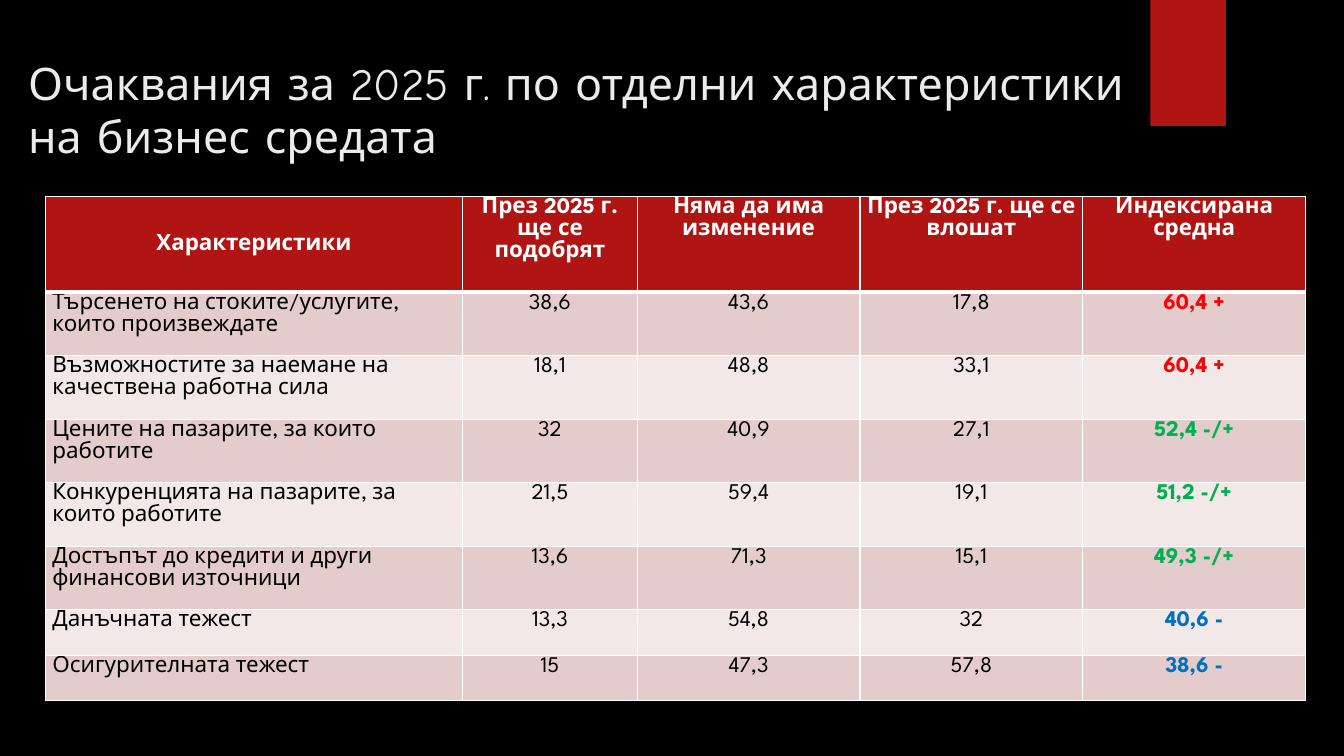
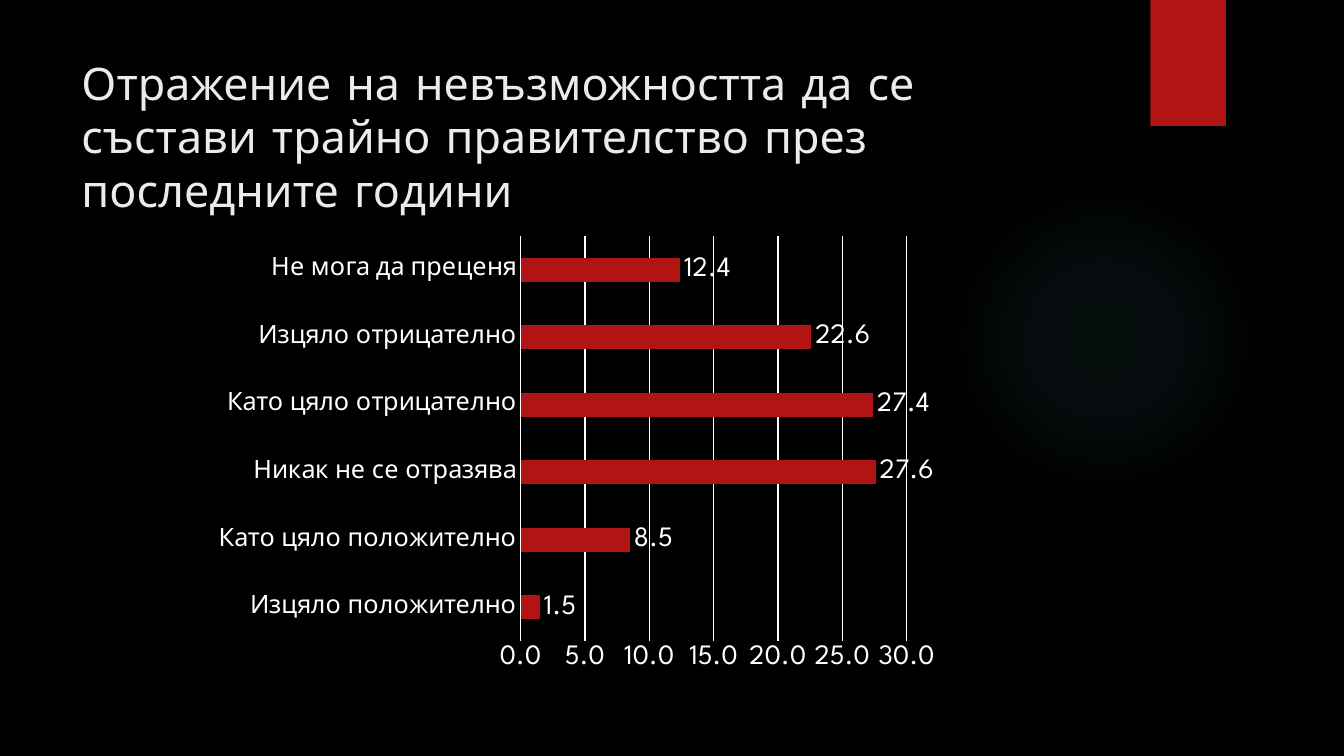
from pptx import Presentation
from pptx.chart.data import CategoryChartData
from pptx.dml.color import RGBColor
from pptx.enum.chart import XL_CHART_TYPE, XL_LABEL_POSITION, XL_TICK_MARK
from pptx.enum.shapes import MSO_SHAPE
from pptx.enum.text import MSO_ANCHOR, PP_ALIGN
from pptx.oxml import parse_xml
from pptx.oxml.ns import nsdecls, qn
from pptx.util import Inches, Pt

COLORS = {
    "background": "000000",
    "accent": "B01513",
    "glow": "50B9C1",
    "title": "EBEBEB",
    "white": "FFFFFF",
    "black": "000000",
    "band_dark": "E4CCCC",
    "band_light": "F2E8E7",
    "better": "FF0000",
    "mixed": "00B050",
    "worse": "0070C0",
}
TITLE_FONT = "Comic Neue"
BODY_FONT = "League Spartan"
GLOW_STOPS = [(0, 7), (36, 6), (69, 0)]  # position and opacity, percent
NUMBER_FORMAT = "###0.0"

HEADERS = ["Характеристики", "През 2025 г. ще се подобрят", "Няма да има изменение",
           "През 2025 г. ще се влошат", "Индексирана средна"]
EXPECTATIONS = [
    ("Търсенето на стоките/услугите, които произвеждате", "38,6", "43,6", "17,8", "60,4 +"),
    ("Възможностите за наемане на качествена работна сила", "18,1", "48,8", "33,1", "60,4 +"),
    ("Цените на пазарите, за които работите", "32", "40,9", "27,1", "52,4 -/+"),
    ("Конкуренцията на пазарите, за които работите", "21,5", "59,4", "19,1", "51,2 -/+"),
    ("Достъпът до кредити и други финансови източници", "13,6", "71,3", "15,1", "49,3 -/+"),
    ("Данъчната тежест", "13,3", "54,8", "32", "40,6 -"),
    ("Осигурителната тежест", "15", "47,3", "57,8", "38,6 -"),
]
INDEX_COLORS = {"+": "better", "-/+": "mixed", "-": "worse"}
COLUMN_WIDTHS = [4.14, 1.73] + [2.21] * 3
ROW_HEIGHTS = [0.95] + [0.63] * 5 + [0.45] * 2

EFFECTS = [
    ("Изцяло положително", 1.5),
    ("Като цяло положително", 8.5),
    ("Никак не се отразява", 27.6),
    ("Като цяло отрицателно", 27.4),
    ("Изцяло отрицателно", 22.6),
    ("Не мога да преценя", 12.4),
]


def color(name):
    return RGBColor.from_string(COLORS[name])


def style_font(font, size, color_name, name=BODY_FONT, bold=False):
    font.name = name
    font.size = Pt(size)
    font.bold = bold
    font.color.rgb = color(color_name)


def style_line(line, color_name, width=0.75):
    line.color.rgb = color(color_name)
    line.width = Pt(width)


class Report:
    """Holds the deck, its style and the slide being built."""

    def __init__(self):
        self.deck = Presentation()
        self.deck.slide_width = Inches(13.33)
        self.deck.slide_height = Inches(7.5)
        self.page = None

    def add_page(self, title, left, width):
        self.page = self.deck.slides.add_slide(self.deck.slide_layouts[6])
        backdrop = self.page.background.fill
        backdrop.solid()
        backdrop.fore_color.rgb = color("background")
        self.add_glow()
        self.add_ribbon()
        self.add_title(title, left, width)

    def add_plain_shape(self, kind, left, top, width, height):
        shape = self.page.shapes.add_shape(
            kind, Inches(left), Inches(top), Inches(width), Inches(height))
        shape.shadow.inherit = False
        shape.line.fill.background()
        return shape

    def add_glow(self):
        """Faint round light that fades to clear at its rim."""
        glow = self.add_plain_shape(MSO_SHAPE.OVAL, 9.41, 1.83, 3.08, 3.08)
        stops = "".join(
            f'<a:gs pos="{position * 1000}"><a:srgbClr val="{COLORS["glow"]}">'
            f'<a:alpha val="{opacity * 1000}"/></a:srgbClr></a:gs>'
            for position, opacity in GLOW_STOPS)
        gradient = parse_xml(
            f'<a:gradFill {nsdecls("a")}><a:gsLst>{stops}</a:gsLst><a:path path="circle">'
            '<a:fillToRect l="50000" t="50000" r="50000" b="50000"/></a:path></a:gradFill>')
        glow._element.spPr.find(qn("a:prstGeom")).addnext(gradient)

    def add_ribbon(self):
        ribbon = self.add_plain_shape(MSO_SHAPE.RECTANGLE, 11.41, 0, 0.75, 1.25)
        ribbon.fill.solid()
        ribbon.fill.fore_color.rgb = color("accent")

    def add_title(self, text, left, width):
        box = self.page.shapes.add_textbox(
            Inches(left), Inches(0.5), Inches(width), Inches(1.53))
        box.text_frame.word_wrap = True
        span = box.text_frame.paragraphs[0].add_run()
        span.text = text
        style_font(span.font, 32, "title", TITLE_FONT)

    def fill_cell(self, cell, text, fill, text_color, bold, align, top=1, bottom=1):
        """Write one table cell; top and bottom are border widths in points."""
        properties = cell._tc.get_or_add_tcPr()
        for side, width in (("L", 1), ("R", 1), ("T", top), ("B", bottom)):
            properties.append(parse_xml(
                f'<a:ln{side} {nsdecls("a")} w="{Pt(width)}"><a:solidFill>'
                f'<a:srgbClr val="{COLORS["white"]}"/></a:solidFill></a:ln{side}>'))
        cell.fill.solid()
        cell.fill.fore_color.rgb = color(fill)
        cell.margin_left = cell.margin_right = Inches(0.07)
        cell.margin_top = cell.margin_bottom = 0
        para = cell.text_frame.paragraphs[0]
        para.alignment = align
        para.line_spacing = 1.07
        span = para.add_run()
        span.text = text
        style_font(span.font, 16, text_color, bold=bold)

    def add_expectations_table(self, left, top):
        table = self.page.shapes.add_table(
            len(ROW_HEIGHTS), len(COLUMN_WIDTHS), Inches(left), Inches(top),
            Inches(sum(COLUMN_WIDTHS)), Inches(sum(ROW_HEIGHTS))).table
        table.first_row = table.horz_banding = False
        for column, width in zip(table.columns, COLUMN_WIDTHS):
            column.width = Inches(width)
        for row, height in zip(table.rows, ROW_HEIGHTS):
            row.height = Inches(height)

        for column, header in enumerate(HEADERS):
            self.fill_cell(table.cell(0, column), header, "accent", "white", True,
                           PP_ALIGN.CENTER, bottom=3)
        table.cell(0, 0).vertical_anchor = MSO_ANCHOR.MIDDLE

        for row, values in enumerate(EXPECTATIONS, start=1):
            band = "band_dark" if row % 2 else "band_light"
            for column, value in enumerate(values):
                is_index = column == len(values) - 1
                text_color = INDEX_COLORS[value.split()[-1]] if is_index else "black"
                align = PP_ALIGN.CENTER if column else PP_ALIGN.LEFT
                self.fill_cell(table.cell(row, column), value, band, text_color,
                               is_index, align, top=3 if row == 1 else 1)

    def add_effects_chart(self, left, top, width, height):
        data = CategoryChartData(number_format=NUMBER_FORMAT)
        data.categories = [name for name, _ in EFFECTS]
        data.add_series("Series 1", [value for _, value in EFFECTS])
        chart = self.page.shapes.add_chart(
            XL_CHART_TYPE.BAR_CLUSTERED, Inches(left), Inches(top),
            Inches(width), Inches(height), data).chart
        chart.has_title = chart.has_legend = False
        style_font(chart.font, 20, "white")

        plot = chart.plots[0]
        plot.gap_width = 182
        plot.vary_by_categories = False
        bars = plot.series[0]
        bars.format.fill.solid()
        bars.format.fill.fore_color.rgb = color("accent")
        labels = bars.data_labels
        labels.show_value = True
        labels.position = XL_LABEL_POSITION.OUTSIDE_END
        labels.number_format = NUMBER_FORMAT
        labels.number_format_is_linked = False
        style_font(labels.font, 20, "white")

        for axis, size in ((chart.category_axis, 18), (chart.value_axis, 20)):
            axis.major_tick_mark = axis.minor_tick_mark = XL_TICK_MARK.NONE
            style_font(axis.tick_labels.font, size, "white")
        chart.category_axis.has_major_gridlines = False
        style_line(chart.category_axis.format.line, "white")
        scale = chart.value_axis
        scale.minimum_scale, scale.maximum_scale, scale.major_unit = 0, 30, 5
        scale.tick_labels.number_format = NUMBER_FORMAT
        scale.tick_labels.number_format_is_linked = False
        scale.format.line.fill.background()
        scale.has_major_gridlines = True
        style_line(scale.major_gridlines.format.line, "white")


def main():
    report = Report()
    report.add_page("Очаквания за 2025 г. по отделни характеристики на бизнес средата",
                    0.18, 11.19)
    report.add_expectations_table(0.45, 1.95)
    report.add_page("Отражение на невъзможността да се състави трайно правителство "
                    "през последните години", 0.71, 10.29)
    report.add_effects_chart(2.02, 2.25, 7.4, 4.5)
    report.deck.save("out.pptx")


if __name__ == "__main__":
    main()
